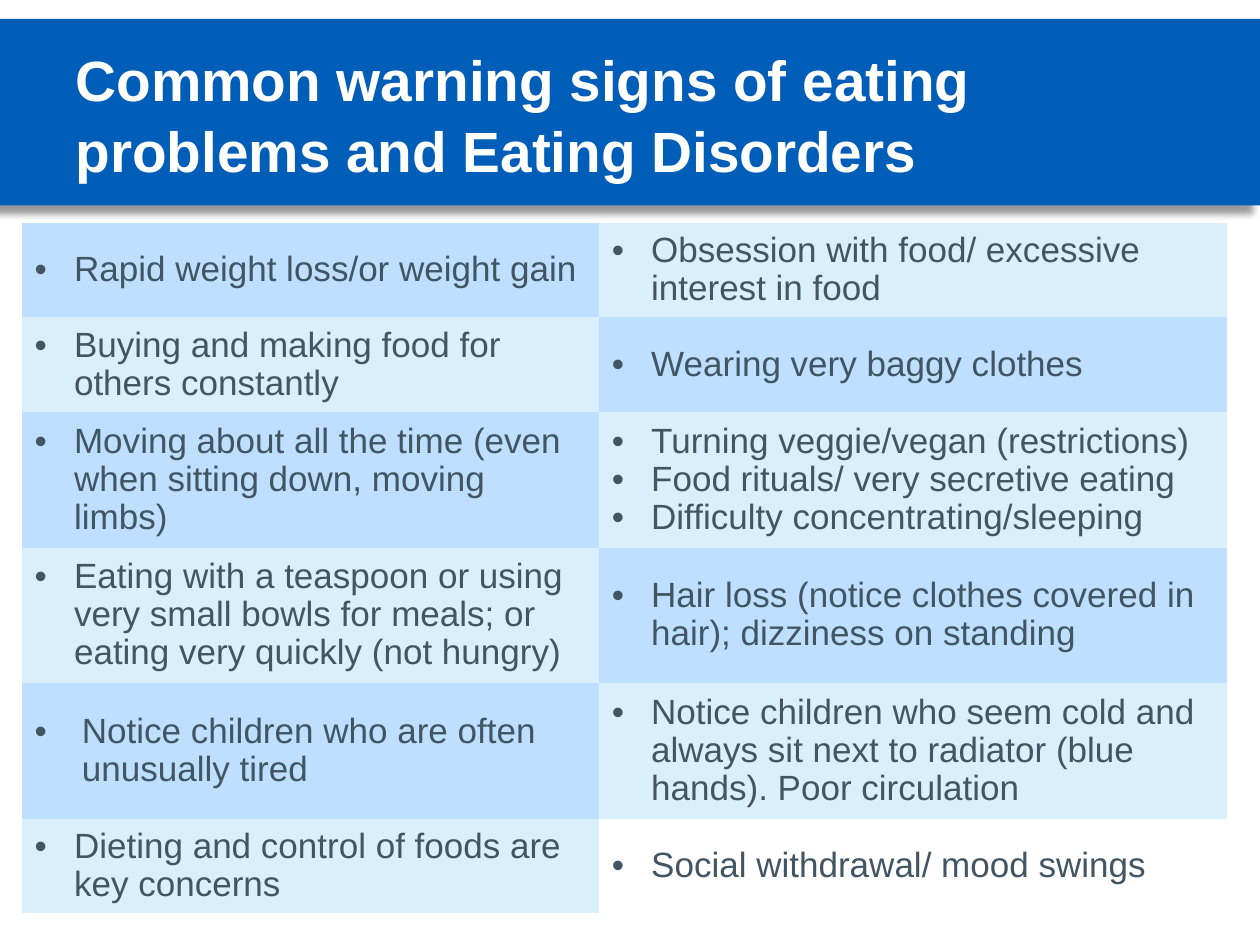
from lxml import etree
from pptx import Presentation
from pptx.dml.color import RGBColor
from pptx.enum import shapes, text
from pptx.oxml import parse_xml
from pptx.oxml.ns import nsdecls, qn
from pptx.util import Pt

BAND = RGBColor(0x00, 0x5E, 0xB8)
WHITE = RGBColor(0xFF, 0xFF, 0xFF)
INK = RGBColor(0x42, 0x55, 0x63)
BLUE = RGBColor(0xBE, 0xDF, 0xFF)
PALE = RGBColor(0xD9, 0xF0, 0xFA)

INDENT, WIDE_INDENT = Pt(22.5), Pt(27)
TIRED = "Notice children who are often unusually tired"
SIGNS = [
    (["Rapid weight loss/or weight gain"],
     ["Obsession with food/ excessive interest in food"]),
    (["Buying and making food for others constantly"],
     ["Wearing very baggy clothes"]),
    (["Moving about all the time (even when sitting down, moving limbs)"],
     ["Turning veggie/vegan (restrictions)",
      "Food rituals/ very secretive eating",
      "Difficulty concentrating/sleeping"]),
    (["Eating with a teaspoon or using very small bowls for meals; "
      "or eating very quickly (not hungry)"],
     ["Hair loss (notice clothes covered in hair); dizziness on standing"]),
    ([TIRED],
     ["Notice children who seem cold and always sit next to radiator "
      "(blue hands). Poor circulation"]),
    (["Dieting and control of foods are key concerns"],
     ["Social withdrawal/ mood swings"]),
]
COL_WIDTHS = [Pt(329.8), Pt(358.6)]
ROW_HEIGHTS = [Pt(h) for h in (54, 54, 77.5, 77.5, 77.5, 54)]


def add_run(p, words, size, color, bold=False):
    r = p.add_run()
    r.text = words
    r.font.name = "Arial"
    r.font.size = Pt(size)
    r.font.bold = bold
    r.font.color.rgb = color


prs = Presentation()
prs.slide_width, prs.slide_height = Pt(720), Pt(540)
s = prs.slides.add_slide(prs.slide_layouts[5])

# Header band with a soft shadow, placed behind the title
title = s.shapes.title
band = s.shapes.add_shape(shapes.MSO_SHAPE.RECTANGLE, 0, Pt(10.8), Pt(720), Pt(106.6))
band.fill.solid()
band.fill.fore_color.rgb = BAND
band.line.fill.background()
band.shadow.inherit = False
effects = band._element.spPr.find(qn("a:effectLst"))
effects.append(parse_xml(
    f'<a:outerShdw {nsdecls("a")} blurRad="{Pt(4)}" dist="{Pt(6)}" dir="8100000" '
    'algn="tr" rotWithShape="0"><a:srgbClr val="000000"><a:alpha val="40000"/>'
    '</a:srgbClr></a:outerShdw>'))
title._element.addprevious(band._element)

# Title
title.left, title.top, title.width, title.height = Pt(36), Pt(19.4), Pt(648), Pt(90)
tf = title.text_frame
tf.word_wrap = True
tf.auto_size = text.MSO_AUTO_SIZE.NONE
tf.vertical_anchor = text.MSO_ANCHOR.MIDDLE
p = tf.paragraphs[0]
p.alignment = text.PP_ALIGN.LEFT
p.line_spacing = 1.05
add_run(p, "Common warning signs of eating problems and Eating Disorders",
        32.4, WHITE, bold=True)

# Table of warning signs
frame = s.shapes.add_table(len(SIGNS), 2, Pt(12.6), Pt(127.4),
                           sum(COL_WIDTHS), sum(ROW_HEIGHTS))
table = frame.table
table.first_row = table.horz_banding = False
for column, width in zip(table.columns, COL_WIDTHS):
    column.width = width
for row, height in zip(table.rows, ROW_HEIGHTS):
    row.height = height

# Checkerboard cells with bullets; the last cell has no fill
for i, row_signs in enumerate(SIGNS):
    for j, signs in enumerate(row_signs):
        cell = table.cell(i, j)
        cell.vertical_anchor = text.MSO_ANCHOR.MIDDLE
        if (i, j) == (len(SIGNS) - 1, 1):
            cell.fill.background()
        else:
            cell.fill.solid()
            cell.fill.fore_color.rgb = PALE if (i + j) % 2 else BLUE
        # No visible borders
        tcPr = cell._tc.get_or_add_tcPr()
        for k, side in enumerate(("lnL", "lnR", "lnT", "lnB")):
            border = etree.Element(qn(f"a:{side}"), w="0")
            etree.SubElement(border, qn("a:noFill"))
            tcPr.insert(k, border)
        tf = cell.text_frame
        for n, sign in enumerate(signs):
            p = tf.add_paragraph() if n else tf.paragraphs[0]
            p.line_spacing = 0.97
            indent = WIDE_INDENT if sign == TIRED else INDENT
            pPr = p._p.get_or_add_pPr()
            pPr.set("marL", str(indent))
            pPr.set("indent", str(-indent))
            etree.SubElement(pPr, qn("a:buFont"), typeface="Arial")
            etree.SubElement(pPr, qn("a:buChar"), char="•")
            add_run(p, sign, 20, INK)

prs.save("out.pptx")
